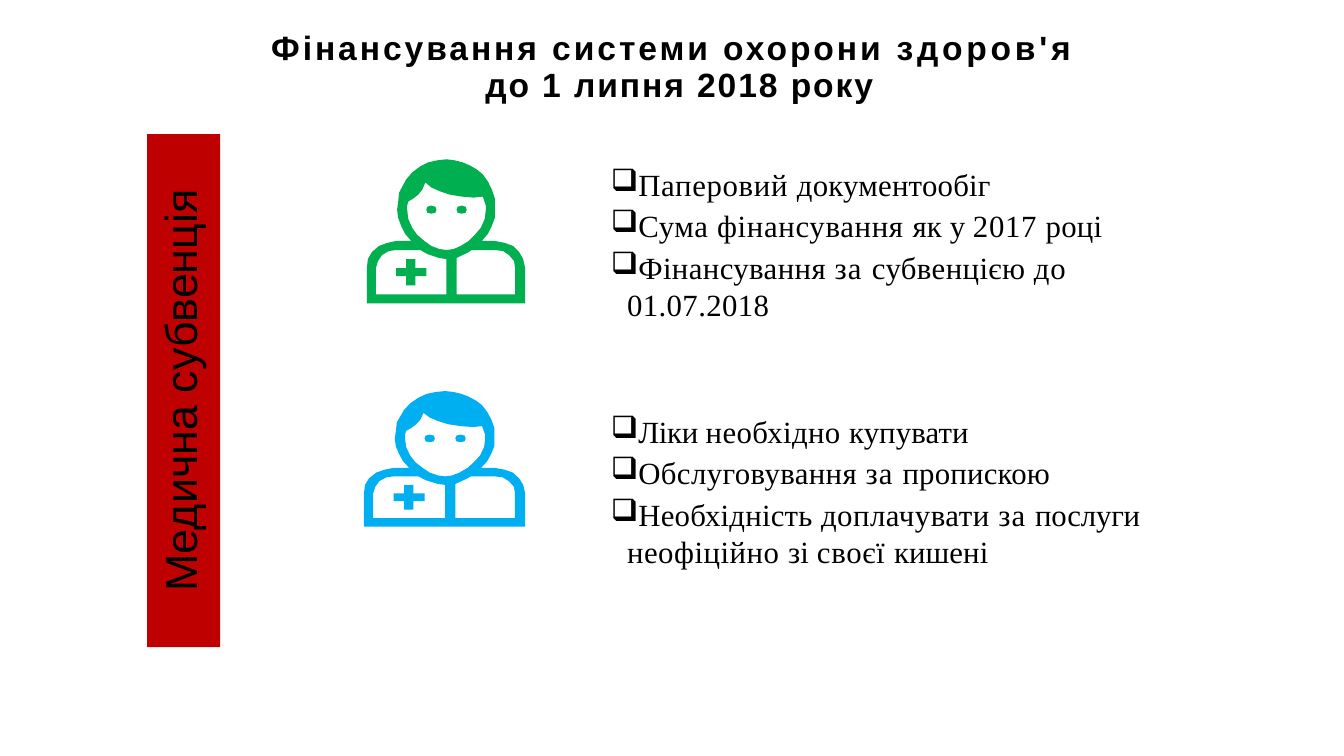
import dataclasses
import typing

import lxml.etree
import pptx
import pptx.dml.color
import pptx.enum.shapes
import pptx.enum.text
import pptx.oxml.ns
import pptx.util

RGB = pptx.dml.color.RGBColor
BLACK = RGB(0x00, 0x00, 0x00)
RED = RGB(0xBF, 0x00, 0x00)
GREEN = RGB(0x00, 0xAF, 0x50)
BLUE = RGB(0x00, 0xAF, 0xEF)

WIDE = pptx.util.Inches(13.33)
HIGH = pptx.util.Inches(7.5)
SANS = "Arial"
SERIF = "Times New Roman"
ALIGN = pptx.enum.text.PP_ALIGN
ANCHOR = pptx.enum.text.MSO_ANCHOR
FIT = pptx.enum.text.MSO_AUTO_SIZE

Point = tuple[float, float]


class Box(typing.NamedTuple):
    left: float
    top: float
    width: float
    height: float

    def place(self) -> tuple[int, int, int, int]:
        return (round(self.left * WIDE / 100), round(self.top * HIGH / 100),
                round(self.width * WIDE / 100), round(self.height * HIGH / 100))


class Bit(typing.NamedTuple):
    text: str
    space: float = 0


@dataclasses.dataclass
class Style:
    face: str
    size: float
    bold: bool = False


@dataclasses.dataclass
class Group:
    color: RGB
    icon: Box
    box: Box
    items: list[list[Bit]]


TITLE = [
    [Bit("Фінансування системи охорони ", 2.1), Bit("здоров'я ", 2.7)],
    [Bit("до 1 липня 2018 року", 1.4)],
]
GROUPS = [
    Group(GREEN, Box(27.3, 21.07, 11.78, 19.07), Box(45.38, 21.07, 44.33, 21.6), [
        [Bit("Паперовий ", 0.5), Bit("документообіг", 0.2)],
        [Bit("Сума фінансування ", 0.5), Bit("як ", 0.1), Bit("у "),
         Bit("2017 ", 0.5), Bit("році", 0.2)],
        [Bit("Фінансування ", 0.3), Bit("за ", 0.9), Bit("субвенцією ", 0.3),
         Bit("до ", 0.6), Bit("01.07.2018", 0.3)],
    ]),
    Group(BLUE, Box(27.08, 51.73, 12, 17.93), Box(45.38, 53.73, 50.55, 21.6), [
        [Bit("Ліки ", -0.2), Bit("необхідно ", 0.3), Bit("купувати", 0.1)],
        [Bit("Обслуговування ", 0.3), Bit("за ", 0.8), Bit("пропискою", 0.2)],
        [Bit("Необхідність ", 0.2), Bit("доплачувати ", 0.4), Bit("за ", 0.8),
         Bit("послуги ", -0.1), Bit("неофіційно ", 0.4), Bit("зі ", 0.1),
         Bit("своєї ", 0.5), Bit("кишені", 0.1)],
    ]),
]

ICON_W, ICON_H = 157, 143
BODY = [
    (0, 143), (0, 108), (1, 99), (5, 92), (12, 86), (20, 83), (29, 81), (44, 81),
    (38, 74), (34, 66), (31, 58), (30, 50), (31, 43), (32, 33), (39, 20), (45, 13),
    (53, 7), (61, 3), (70, 1), (79, 0), (87, 1), (95, 3), (102, 6), (109, 10),
    (115, 15), (120, 22), (124, 30), (127, 39), (127, 50), (127, 58), (124, 66),
    (120, 74), (114, 81), (127, 81), (137, 83), (145, 86), (151, 92), (155, 99),
    (157, 108), (157, 143),
]
FACE = [
    (58, 23), (55, 30), (51, 35), (46, 39), (41, 42), (40, 46), (40, 50), (41, 59),
    (45, 68), (50, 75), (57, 81), (64, 86), (72, 89), (79, 90), (86, 89), (93, 86),
    (101, 81), (107, 75), (113, 68), (117, 59), (118, 50), (118, 46), (117, 43),
    (115, 37), (106, 38), (94, 37), (82, 35), (73, 32), (64, 28),
]
LEFT = [
    (9, 134), (9, 108), (11, 101), (15, 95), (22, 91), (29, 90), (53, 90),
    (60, 94), (66, 96), (72, 98), (79, 99), (79, 134),
]
RIGHT = [
    (89, 134), (89, 98), (93, 96), (97, 94), (101, 92), (104, 90), (127, 90),
    (135, 91), (141, 95), (146, 101), (147, 108), (147, 134),
]
CROSS = [
    (39, 99), (48, 99), (48, 108), (59, 108), (59, 116), (48, 116),
    (48, 125), (39, 125), (39, 116), (29, 116), (29, 108), (39, 108),
]
EYE = [(-5, 0), (-4, -3), (0, -4), (4, -3), (5, 0), (4, 3), (0, 4), (-4, 3)]
EYES = [[(mid + x, 50 + y) for x, y in EYE] for mid in (64, 94)]
DOCTOR: list[list[Point]] = [BODY, FACE, LEFT, RIGHT, CROSS, *EYES]


def write(para: typing.Any, bits: list[Bit], style: Style) -> None:
    for bit in bits:
        run = para.add_run()
        run.text = bit.text
        run.font.name = style.face
        run.font.size = pptx.util.Pt(style.size)
        run.font.bold = style.bold
        run.font.color.rgb = BLACK
        run._r.get_or_add_rPr().set("spc", str(round(bit.space * 100)))


def paint(shape: typing.Any, color: RGB) -> None:
    shape.shadow.inherit = False
    shape.fill.solid()
    shape.fill.fore_color.rgb = color
    shape.line.fill.background()


def pad(frame: typing.Any, top: float = 0) -> None:
    frame.margin_left = frame.margin_right = frame.margin_bottom = 0
    frame.margin_top = pptx.util.Inches(top)


def add_title(slide: typing.Any) -> None:
    title = slide.shapes.title
    title.left, title.top, title.width, title.height = Box(7.43, 5.6, 86.25, 6.8).place()
    frame = title.text_frame
    frame.auto_size = FIT.NONE
    frame.vertical_anchor = ANCHOR.MIDDLE
    para = frame.paragraphs[0]
    para.alignment = ALIGN.CENTER
    para.line_spacing = 0.9
    for row, bits in enumerate(TITLE):
        if row:
            para.add_line_break()
        write(para, bits, Style(SANS, 24, True))


def add_bar(slide: typing.Any) -> None:
    kind = pptx.enum.shapes.MSO_SHAPE.RECTANGLE
    bar = slide.shapes.add_shape(kind, *Box(10.95, 17.73, 5.43, 67.87).place())
    paint(bar, RED)
    frame = bar.text_frame
    pad(frame)
    frame.margin_left = pptx.util.Inches(0.05)
    frame.vertical_anchor = ANCHOR.TOP
    bar.element.txBody.bodyPr.set("vert", "vert270")
    para = frame.paragraphs[0]
    para.alignment = ALIGN.CENTER
    write(para, [Bit("Медична субвенція")], Style(SANS, 32))


def add_icon(slide: typing.Any, box: Box, color: RGB) -> None:
    left, top, width, height = box.place()
    rings = [[(left + round(x * width / ICON_W), top + round(y * height / ICON_H))
              for x, y in ring] for ring in DOCTOR]
    pen = slide.shapes.build_freeform(*rings[0][0])
    for ring in rings:
        pen.move_to(*ring[0])
        pen.add_line_segments(ring[1:], close=True)
    paint(pen.convert_to_shape(), color)


def add_list(slide: typing.Any, box: Box, items: list[list[Bit]]) -> None:
    frame = slide.shapes.add_textbox(*box.place()).text_frame
    frame.word_wrap = True
    frame.auto_size = FIT.SHAPE_TO_FIT_TEXT
    pad(frame, 0.06)
    for row, bits in enumerate(items):
        para = frame.add_paragraph() if row else frame.paragraphs[0]
        para.space_before = pptx.util.Pt(3.3 if row else 4.1)
        props = para._p.get_or_add_pPr()
        props.set("marL", str(pptx.util.Inches(0.17)))
        props.set("indent", str(pptx.util.Inches(-0.16)))
        mark = lxml.etree.SubElement(props, pptx.oxml.ns.qn("a:buChar"))
        mark.set("char", "❑")
        write(para, bits, Style(SERIF, 22))


def main() -> None:
    deck = pptx.Presentation()
    deck.slide_width, deck.slide_height = WIDE, HIGH
    slide = deck.slides.add_slide(deck.slide_layouts[5])
    add_title(slide)
    add_bar(slide)
    for group in GROUPS:
        add_icon(slide, group.icon, group.color)
        add_list(slide, group.box, group.items)
    deck.save("out.pptx")


if __name__ == "__main__":
    main()
